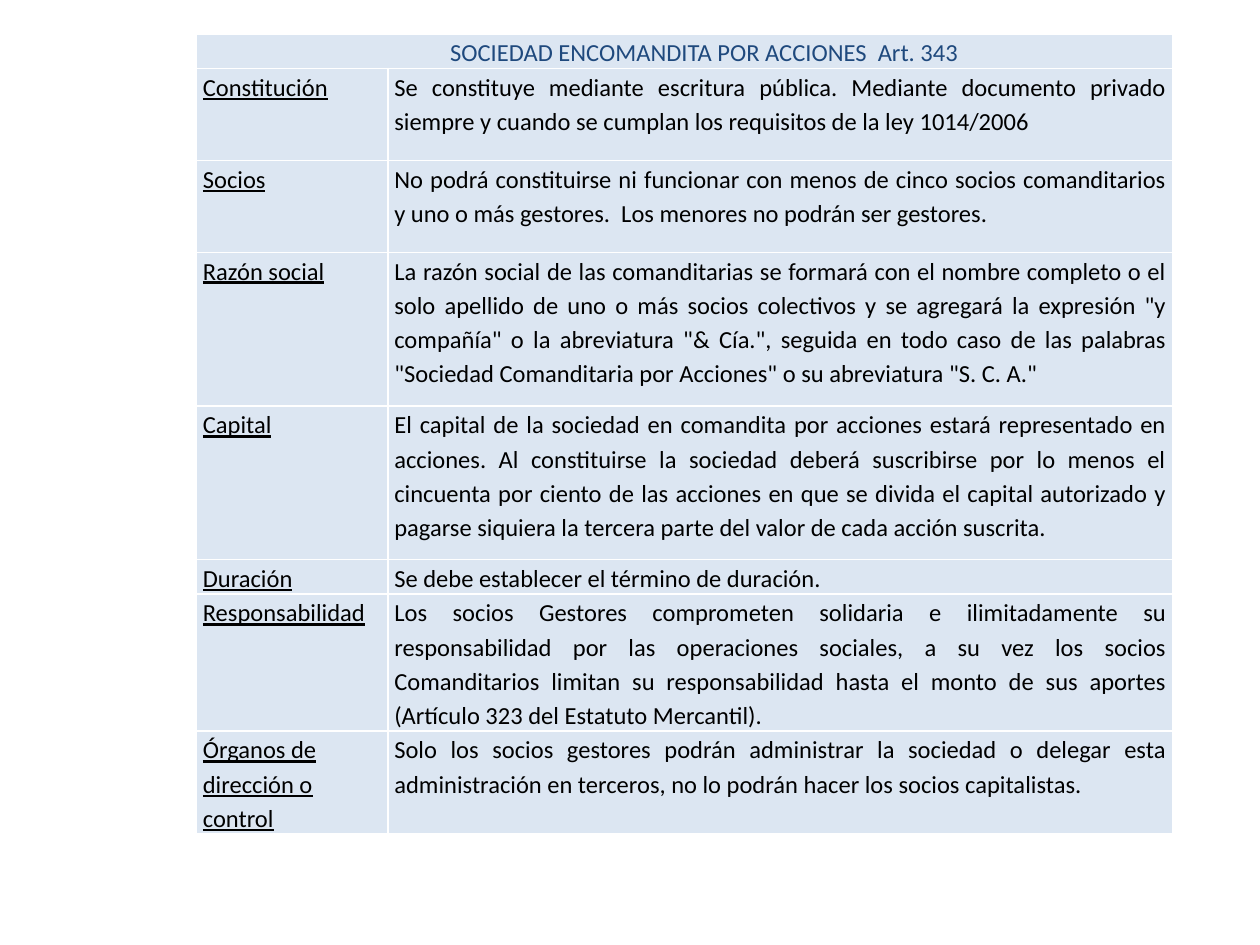
from dataclasses import dataclass

from lxml import etree
from pptx import Presentation
from pptx.dml.color import RGBColor
from pptx.enum.text import PP_ALIGN
from pptx.oxml.ns import qn
from pptx.table import _Cell
from pptx.util import Inches, Pt

LEFT, CENTER, JUSTIFY = PP_ALIGN.LEFT, PP_ALIGN.CENTER, PP_ALIGN.JUSTIFY
BLANK_LAYOUT = 6


@dataclass(frozen=True)
class Theme:
    font: str = "Calibri"
    size: float = 14
    line_spacing: float = 1.15
    label_space: float = 10
    border_width: float = 1
    side_margin: float = 0.05
    heading: str = "1F497D"
    text: str = "000000"
    fill: str = "DCE6F2"
    border: str = "FFFFFF"


@dataclass(frozen=True)
class Aspect:
    label: str
    detail: str
    height: float
    detail_space: float = 0
    label_align: PP_ALIGN = JUSTIFY


THEME = Theme()
SLIDE_WIDTH, SLIDE_HEIGHT = 10, 7.5
TABLE_LEFT, TABLE_TOP = 1.56, 0.27
COLUMN_WIDTHS = (1.52, 6.23)
HEADING = "SOCIEDAD ENCOMANDITA POR ACCIONES  Art. 343"
HEADING_HEIGHT = 0.25
HEADING_SHIFT = 0.31

ASPECTS = (
    Aspect(
        "Constitución",
        "Se constituye mediante escritura pública. Mediante documento privado "
        "siempre y cuando se cumplan los requisitos de la ley 1014/2006",
        0.73,
    ),
    Aspect(
        "Socios",
        "No podrá constituirse ni funcionar con menos de cinco socios comanditarios "
        "y uno o más gestores.  Los menores no podrán ser gestores.",
        0.73,
    ),
    Aspect(
        "Razón social",
        "La razón social de las comanditarias se formará con el nombre completo o el "
        "solo apellido de uno o más socios colectivos y se agregará la expresión \"y "
        "compañía\" o la abreviatura \"& Cía.\", seguida en todo caso de las palabras "
        "\"Sociedad Comanditaria por Acciones\" o su abreviatura \"S. C. A.\"",
        1.22,
        detail_space=7.5,
    ),
    Aspect(
        "Capital",
        "El capital de la sociedad en comandita por acciones estará representado en "
        "acciones. Al constituirse la sociedad deberá suscribirse por lo menos el "
        "cincuenta por ciento de las acciones en que se divida el capital autorizado y "
        "pagarse siquiera la tercera parte del valor de cada acción suscrita.",
        1.22,
    ),
    Aspect("Duración", "Se debe establecer el término de duración.", 0.26),
    Aspect(
        "Responsabilidad",
        "Los socios Gestores comprometen solidaria e ilimitadamente su "
        "responsabilidad por las operaciones sociales, a su vez los socios "
        "Comanditarios limitan su responsabilidad hasta el monto de sus aportes "
        "(Artículo 323 del Estatuto Mercantil).",
        1.04,
        detail_space=7.5,
    ),
    Aspect(
        "Órganos de dirección o control",
        "Solo los socios gestores podrán administrar la sociedad o delegar esta "
        "administración en terceros, no lo podrán hacer los socios capitalistas.",
        0.78,
        detail_space=10,
        label_align=LEFT,
    ),
)


def style_cell(cell: _Cell) -> None:
    """Set the margins, white borders and pale fill shared by all cells."""
    cell.margin_left = cell.margin_right = Inches(THEME.side_margin)
    cell.margin_top = cell.margin_bottom = 0
    properties = cell._tc.get_or_add_tcPr()
    for side in ("a:lnL", "a:lnR", "a:lnT", "a:lnB"):
        line = etree.SubElement(properties, qn(side), w=str(Pt(THEME.border_width)))
        paint = etree.SubElement(line, qn("a:solidFill"))
        etree.SubElement(paint, qn("a:srgbClr"), val=THEME.border)
    cell.fill.solid()
    cell.fill.fore_color.rgb = RGBColor.from_string(THEME.fill)


def write_cell(cell: _Cell, text: str, align: PP_ALIGN, space: float,
               color: str = THEME.text, underline: bool = False) -> None:
    paragraph = cell.text_frame.paragraphs[0]
    paragraph.text = text
    paragraph.alignment = align
    paragraph.line_spacing = THEME.line_spacing
    paragraph.space_after = Pt(space)
    font = paragraph.font
    font.name = THEME.font
    font.size = Pt(THEME.size)
    font.underline = underline
    font.color.rgb = RGBColor.from_string(color)


def main() -> None:
    deck = Presentation()
    deck.slide_width, deck.slide_height = Inches(SLIDE_WIDTH), Inches(SLIDE_HEIGHT)
    slide = deck.slides.add_slide(deck.slide_layouts[BLANK_LAYOUT])

    heights = [HEADING_HEIGHT, *(aspect.height for aspect in ASPECTS)]
    table = slide.shapes.add_table(
        len(heights), len(COLUMN_WIDTHS), Inches(TABLE_LEFT), Inches(TABLE_TOP),
        Inches(sum(COLUMN_WIDTHS)), Inches(sum(heights)),
    ).table
    table.first_row = table.horz_banding = False
    for column, width in zip(table.columns, COLUMN_WIDTHS):
        column.width = Inches(width)
    for row, height in zip(table.rows, heights):
        row.height = Inches(height)
    for cell in table.iter_cells():
        style_cell(cell)

    heading = table.cell(0, 0)
    heading.merge(table.cell(0, 1))
    heading.margin_left = Inches(THEME.side_margin + HEADING_SHIFT)
    write_cell(heading, HEADING, CENTER, THEME.label_space, THEME.heading)

    for row, aspect in enumerate(ASPECTS, start=1):
        write_cell(table.cell(row, 0), aspect.label, aspect.label_align,
                   THEME.label_space, underline=True)
        write_cell(table.cell(row, 1), aspect.detail, JUSTIFY, aspect.detail_space)

    deck.save("out.pptx")


if __name__ == "__main__":
    main()
